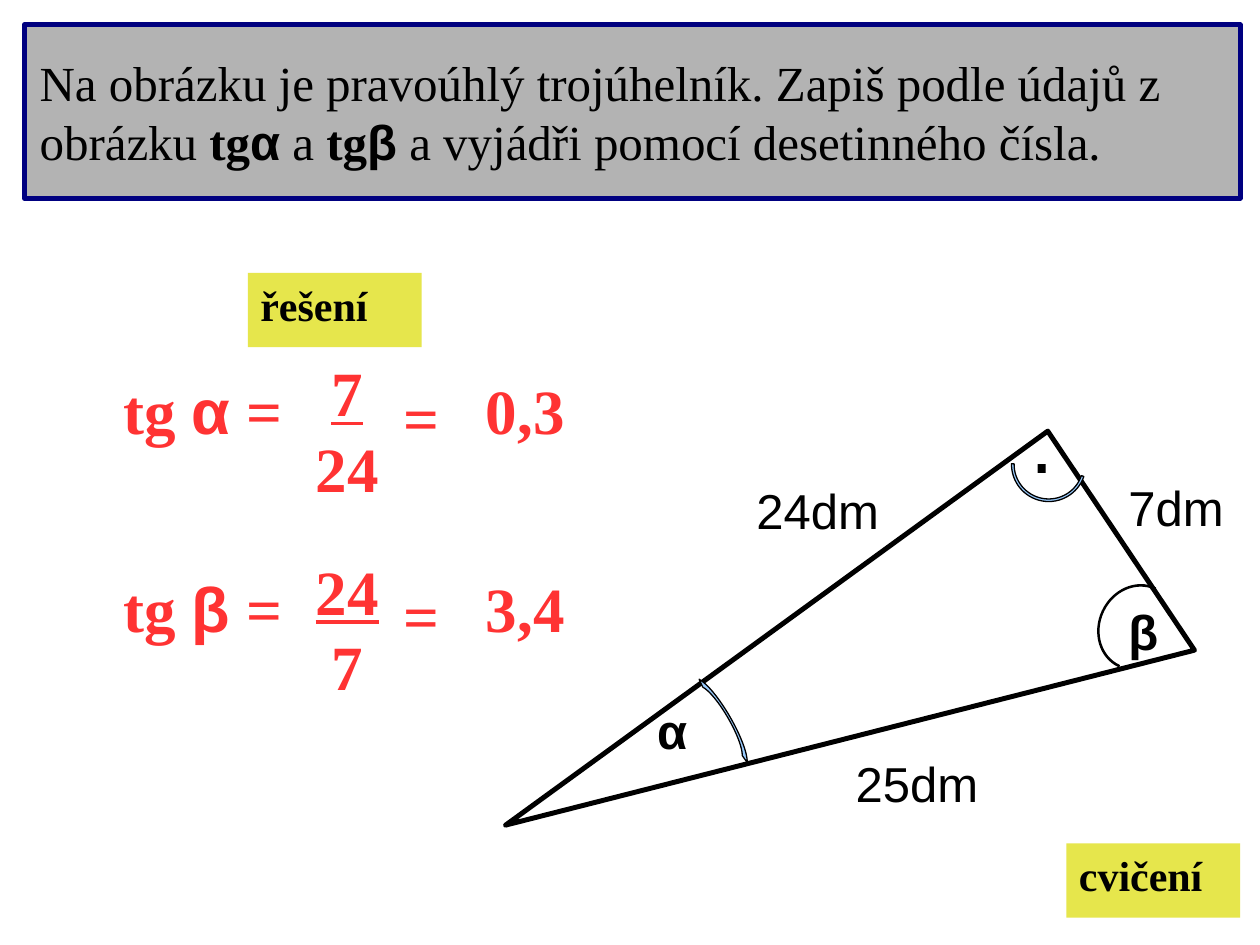
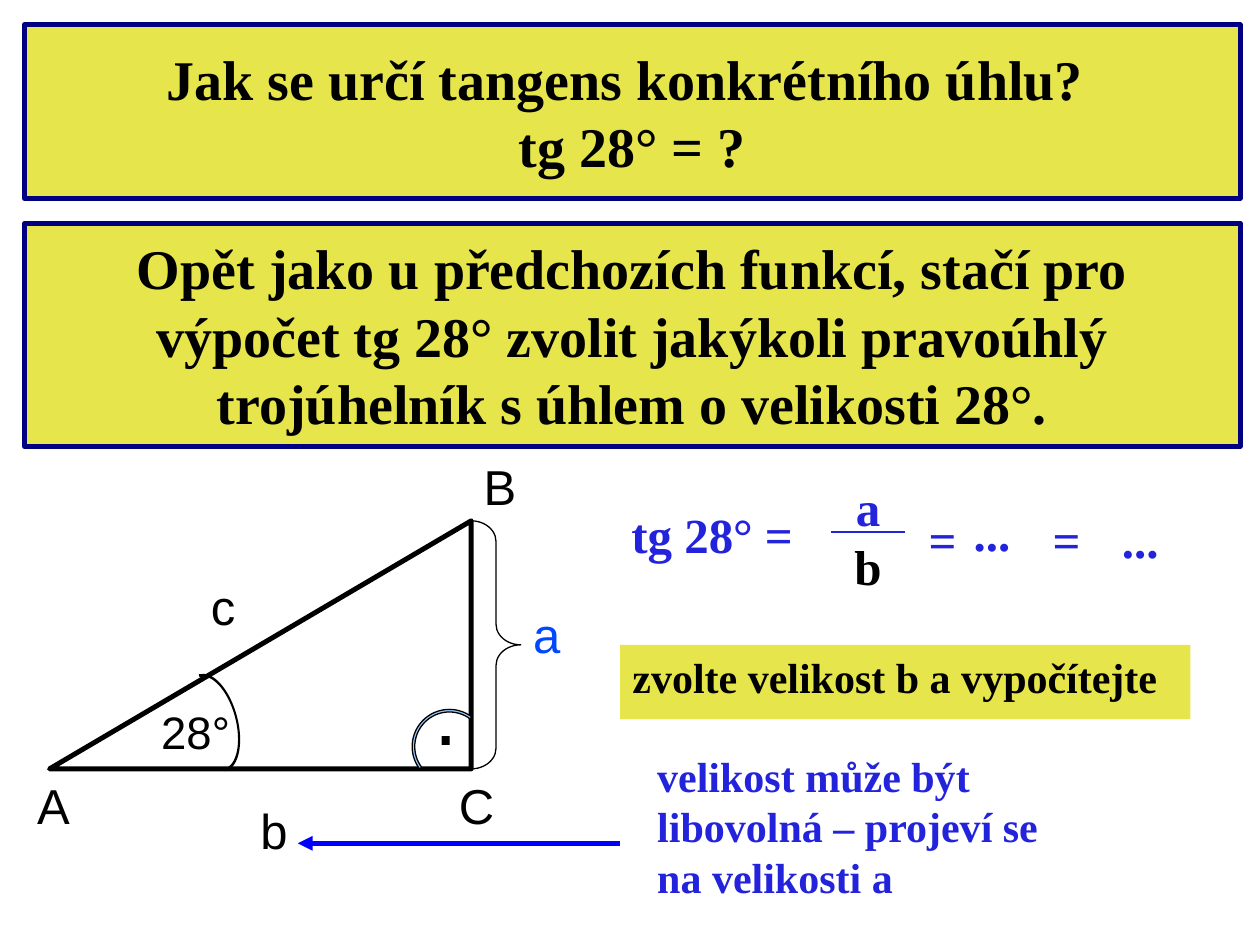
"""Builds two slides on the tangent of an angle in a right triangle."""
import math

import pptx
import pptx.dml.color
import pptx.enum.shapes
import pptx.enum.text
import pptx.oxml
import pptx.oxml.ns
import pptx.util

Cm = pptx.util.Cm
ALIGN = pptx.enum.text.PP_ALIGN
ANCHOR = pptx.enum.text.MSO_ANCHOR
SHAPE = pptx.enum.shapes.MSO_SHAPE
SERIF, SANS = "Times New Roman", "Arial"
COLORS = {
    "ink": "000000", "navy": "000080", "grey": "B3B3B3", "yellow": "E6E64C",
    "sky": "99CCFF", "red": "FF3333", "blue": "2323DC", "side": "0047FF",
    "arrow": "0000FF",
}


def rgb(name):
    """Return the named colour."""
    return pptx.dml.color.RGBColor.from_string(COLORS[name])


def element(tag, content="", attributes=""):
    """Return a DrawingML element."""
    space = pptx.oxml.ns.nsdecls("a")
    return pptx.oxml.parse_xml(f"<a:{tag} {space} {attributes}>{content}</a:{tag}>")


def style(shape, fill=None, line=None, width=0.75):
    """Set fill and outline and drop the shadow."""
    shape.shadow.inherit = False
    if fill:
        shape.fill.solid()
        shape.fill.fore_color.rgb = rgb(fill)
    else:
        shape.fill.background()
    if line:
        shape.line.color.rgb = rgb(line)
        shape.line.width = pptx.util.Pt(width)
    else:
        shape.line.fill.background()


def write(shape, paragraphs, size=28, color="ink", font=SERIF, bold=True,
          align=ALIGN.LEFT, middle=False, wrap=True):
    """Fill a shape with paragraphs, each a string or a list of (text, font, bold)."""
    frame = shape.text_frame
    frame.word_wrap = wrap
    frame.vertical_anchor = ANCHOR.MIDDLE if middle else ANCHOR.TOP
    frame.margin_left = frame.margin_right = Cm(0.3 if middle else 0.25)
    frame.margin_top = frame.margin_bottom = Cm(0.18 if middle else 0.13)
    for index, content in enumerate(paragraphs):
        para = frame.add_paragraph() if index else frame.paragraphs[0]
        para.alignment = align
        para.font.size = pptx.util.Pt(size)
        para.font.color.rgb = rgb(color)
        if isinstance(content, str):
            para.font.name, para.font.bold = font, bold
            para.add_run().text = content
            continue
        for text, span_font, span_bold in content:
            span = para.add_run()
            span.text = text
            span.font.name, span.font.bold = span_font, span_bold


def label(page, left, top, width, height, *paragraphs, **options):
    """Add a text box."""
    box = page.shapes.add_textbox(Cm(left), Cm(top), Cm(width), Cm(height))
    write(box, paragraphs, **options)
    return box


def panel(page, left, top, width, height, paragraphs, fill="yellow", line=None, **options):
    """Add a filled rectangle with text."""
    box = page.shapes.add_shape(SHAPE.RECTANGLE, Cm(left), Cm(top), Cm(width), Cm(height))
    style(box, fill, line, 2.83)
    write(box, paragraphs, **options)


def banner(page, top, height, paragraphs, **options):
    """Add a framed band across the page."""
    panel(page, 0.5, top, 24.5, height, paragraphs, line="navy", middle=True, **options)


def button(page, left, top, width, text):
    """Add a yellow caption."""
    panel(page, left, top, width, 1.5, [text], size=24)


def outline(page, left, top, points, turn=0, fill=None, width=0.75):
    """Draw a closed polygon from a corner, turned by some degrees."""
    corners = [(Cm(left + x), Cm(top + y)) for x, y in points]
    builder = page.shapes.build_freeform(*corners[0])
    builder.add_line_segments(corners[1:], close=True)
    shape = builder.convert_to_shape()
    shape.rotation = turn
    style(shape, fill, "ink", width)
    return shape


def arc(page, left, top, width, height, start=180, end=360, turn=0, inner=0.97):
    """Draw a thin band along part of the ellipse that fills a box."""
    box = [(0, 0), (width, 0), (width, height), (0, height)]
    shape = outline(page, left, top, box, turn, "sky")

    def point(scale, angle, pull=0):
        """Return a point of the ellipse, moved along its tangent by pull."""
        across = math.cos(angle) - pull * math.sin(angle)
        down = math.sin(angle) + pull * math.cos(angle)
        x, y = Cm(width / 2 * (1 + scale * across)), Cm(height / 2 * (1 + scale * down))
        return f'<a:pt x="{x}" y="{y}"/>'

    first, last = math.radians(start), math.radians(end)
    middle = (first + last) / 2
    pull = 4 / 3 * math.tan((last - first) / 8)
    track = shape._element.xpath(".//a:path")[0]
    for child in list(track):
        track.remove(child)
    for tag, scale, stops, bend in (("moveTo", 1, (first, middle, last), pull),
                                    ("lnTo", inner, (last, middle, first), -pull)):
        track.append(element(tag, point(scale, stops[0])))
        for begin, finish in zip(stops, stops[1:]):
            track.append(element("cubicBezTo", point(scale, begin, bend)
                                 + point(scale, finish, -bend) + point(scale, finish)))
    track.append(element("close"))


def segment(page, x1, y1, x2, y2, color, width, arrow=False):
    """Draw a straight line, with an arrowhead at its end if asked."""
    line = page.shapes.add_connector(
        pptx.enum.shapes.MSO_CONNECTOR.STRAIGHT, Cm(x1), Cm(y1), Cm(x2), Cm(y2))
    line.line.color.rgb = rgb(color)
    line.line.width = pptx.util.Pt(width)
    if arrow:
        line.line._get_or_add_ln().append(element("tailEnd", attributes='type="triangle"'))
    line._element.spPr.append(element("effectLst"))


def side_names(page, left, top, names, dot):
    """Write the names around a triangle and the dot of its right angle."""
    for text, x, y, width, options in names:
        label(page, left + x, top + y, width, 1.45, text,
              **{"font": SANS, "bold": False, **options})
    label(page, left + dot[0], top + dot[1], 0.97, 2.29, ".",
          size=48, font=SANS, bold=False, wrap=False)


def measured_triangle(page, left, top):
    """Draw the triangle with sides in decimetres."""
    strong = {"bold": True}
    outline(page, left + 2.34, top - 0.57, [(0, 0), (10.5, 8.5), (7, 12.5)], 285, width=2.83)
    side_names(page, left, top, [
        ("α", 3, 6.5, 1.5, strong), ("β", 12.5, 4.5, 1.5, strong),
        ("24dm", 5, 2.05, 3.5, {}), ("7dm", 12.5, 2, 2.5, {}), ("25dm", 7, 7.56, 3, {}),
    ], (10.52, 0.22))
    arc(page, left + 10.39, top + 1.11, 1.5, 1.5, 189, 351, turn=190, inner=0.93)
    arc(page, left + 12.05, top + 4.37, 1.75, 1.55, turn=295)
    arc(page, left + 3.46, top + 6.83, 2.08, 0.5, 201, 339, turn=60, inner=0.82)


def lettered_triangle(page, left, top):
    """Draw triangle ABC with its angle of 28° and a brace along side a."""
    outline(page, left, top, [(0.5, 6.5), (9, 6.5), (9, 1.5)], width=2.83)
    side_names(page, left, top, [
        ("A", 0, 6.5, 1.5, {}), ("28°", 2.5, 5.07, 2, {"size": 26}),
        ("c", 3.5, 2.5, 2.5, {}), ("b", 4.5, 7, 1.5, {}), ("C", 8.5, 6.5, 1.5, {}),
        ("B", 9, 0.07, 1.5, {}), ("a", 10, 3.06, 1.5, {"color": "side"}),
    ], (8.02, 4.21))
    arc(page, left + 2.78, top + 5.07, 2, 1, turn=75)
    arc(page, left + 7.81, top + 5.3, 1.5, 1.5, 188, 352, turn=315, inner=0.93)
    brace = page.shapes.add_shape(
        SHAPE.RIGHT_BRACE, Cm(left + 9), Cm(top + 1.5), Cm(1), Cm(5))
    brace.adjustments[0] = 0.416
    style(brace, line="ink")


def tangent_row(page, left, top, angle, numerator, denominator, value):
    """Write the tangent of one angle as a fraction and a decimal."""
    look = {"size": 36, "color": "red", "align": ALIGN.CENTER}
    label(page, left, top, 4.5, 2.5,
          [("tg ", SERIF, True), (angle, SANS, True), (" = ", SERIF, True)],
          middle=True, **look)
    fraction = label(page, left + 3.5, top, 3, 3, numerator, denominator, **look)
    fraction.text_frame.paragraphs[0].font.underline = True
    label(page, left + 5.5, top + 0.5, 2, 1.5, "=", **look)
    label(page, left + 6.5, top, 4.5, 2.5, value + " ", middle=True, **look)


def open_equation(page, left, top):
    """Write tg 28° as a fraction with results left open."""
    look = {"color": "blue", "align": ALIGN.CENTER}
    label(page, left - 0.02, top + 0.55, 5, 1.6, "tg 28° = ", **look)
    fraction = label(page, left + 4, top, 3, 3, "a", "b", **look)
    fraction.text_frame.paragraphs[1].font.color.rgb = rgb("ink")
    segment(page, left + 4.76, top + 1.22, left + 6.24, top + 1.22, "blue", 1.25)
    for offset in (6, 8.5):
        label(page, left + offset, top + 0.65, 2, 1.5, "=", **look)
    label(page, left + 6.5, top + 0.5, 3, 3, "...", **look)
    label(page, left + 8.86, top + 0.12, 4.5, 2.5, "... ", middle=True, **look)


def exercise_slide(page):
    """Build the exercise with its solution."""
    measured_triangle(page, 10, 7.5)
    banner(page, 0.5, 3.5, [[
        ("Na obrázku je pravoúhlý trojúhelník. Zapiš podle údajů z obrázku ", SERIF, False),
        ("tg", SERIF, True), ("α", SANS, True), (" a ", SERIF, False),
        ("tg", SERIF, True), ("β", SANS, True),
        (" a vyjádři pomocí desetinného čísla.", SERIF, False),
    ]], fill="grey")
    tangent_row(page, 2, 7, "α", "7", "24", "0,3")
    tangent_row(page, 2, 11, "β", "24", "7", "3,4")
    button(page, 5, 5.5, 3.5, "řešení")
    button(page, 21.5, 17, 3.5, "cvičení")


def question_slide(page):
    """Build the question about the tangent of 28°."""
    heading = {"size": 32, "align": ALIGN.CENTER}
    banner(page, 0.5, 3.5, ["Jak se určí tangens konkrétního úhlu? ", "tg 28° = ?"], **heading)
    banner(page, 4.5, 4.5, [
        "Opět jako u předchozích funkcí, stačí pro výpočet tg 28° zvolit jakýkoli "
        "pravoúhlý trojúhelník s úhlem o velikosti 28°."], **heading)
    lettered_triangle(page, 0.5, 9)
    segment(page, 12.5, 17, 6, 17, "arrow", 2.83, arrow=True)
    label(page, 13, 15, 8.5, 3.5, "velikost může být libovolná – projeví se na velikosti a",
          size=24, color="blue")
    open_equation(page, 12, 9.5)
    button(page, 12.5, 13, 11.5, "zvolte velikost b a vypočítejte")


def main():
    """Build and save the deck."""
    deck = pptx.Presentation()
    deck.slide_width, deck.slide_height = Cm(25.4), Cm(19.05)
    for build in (exercise_slide, question_slide):
        build(deck.slides.add_slide(deck.slide_layouts[6]))
    deck.save("out.pptx")


if __name__ == "__main__":
    main()
